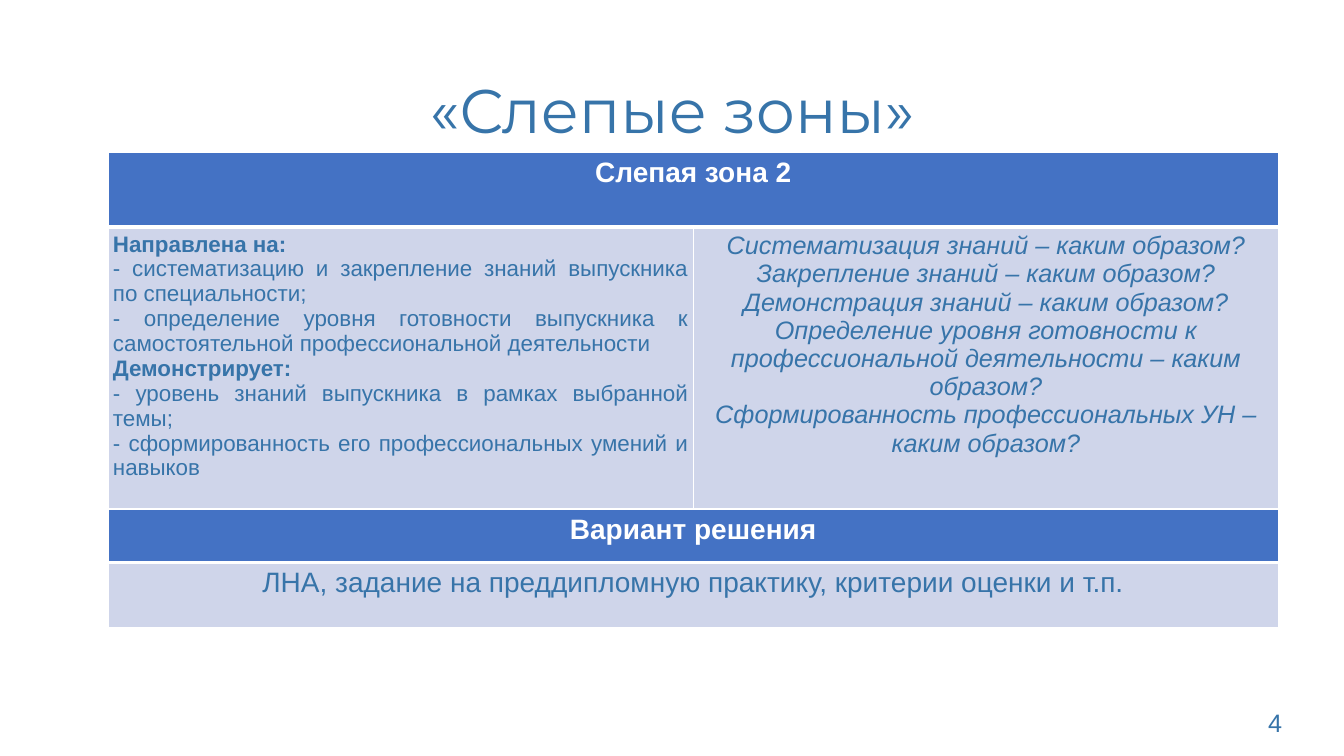
import dataclasses

import lxml.etree
import pptx
import pptx.dml.color
import pptx.enum.text
import pptx.oxml.ns
import pptx.util

ALIGN = pptx.enum.text.PP_ALIGN


@dataclasses.dataclass(frozen=True)
class Theme:
    text: str = "3774A9"
    header: str = "4472C4"
    panel: str = "CFD5EA"
    white: str = "FFFFFF"
    title_font: str = "Montserrat"
    body_font: str = "Arial"
    title_size: int = 44
    heading_size: int = 20
    answer_size: int = 18
    detail_size: int = 16
    thin_line: int = 1
    thick_line: int = 3


@dataclasses.dataclass
class Entry:
    text: str
    size: int
    bold: bool = False
    italic: bool = False
    align: ALIGN = ALIGN.CENTER


class SlideBuilder:
    def __init__(self, deck, theme):
        self.deck = deck
        self.theme = theme
        self.page = deck.slides.add_slide(deck.slide_layouts[5])

    def across(self, percent):
        return round(self.deck.slide_width * percent / 100)

    def down(self, percent):
        return round(self.deck.slide_height * percent / 100)

    def area(self, left, top, width, height):
        return self.across(left), self.down(top), self.across(width), self.down(height)

    def style(self, paragraph, entry, color, font):
        paragraph.text = entry.text
        paragraph.alignment = entry.align
        paragraph.font.name = font
        paragraph.font.size = pptx.util.Pt(entry.size)
        paragraph.font.bold = entry.bold
        paragraph.font.italic = entry.italic
        paragraph.font.color.rgb = pptx.dml.color.RGBColor.from_string(color)

    def title(self, text, area):
        box = self.page.shapes.title
        box.left, box.top, box.width, box.height = self.area(*area)
        box.text_frame.vertical_anchor = pptx.enum.text.MSO_ANCHOR.MIDDLE
        paragraph = box.text_frame.paragraphs[0]
        self.style(paragraph, Entry(text, self.theme.title_size),
                   self.theme.text, self.theme.title_font)
        paragraph.line_spacing = 0.9

    def page_number(self, text, area):
        box = self.page.shapes.add_textbox(*self.area(*area))
        box.text_frame.word_wrap = True
        entry = Entry(text, self.theme.answer_size, align=ALIGN.LEFT)
        self.style(box.text_frame.paragraphs[0], entry,
                   self.theme.text, self.theme.body_font)

    def border(self, cell, side, points):
        properties = cell._tc.get_or_add_tcPr()
        line = lxml.etree.SubElement(properties, pptx.oxml.ns.qn(f"a:ln{side}"),
                                     w=str(pptx.util.Pt(points)))
        fill = lxml.etree.SubElement(line, pptx.oxml.ns.qn("a:solidFill"))
        lxml.etree.SubElement(fill, pptx.oxml.ns.qn("a:srgbClr"), val=self.theme.white)

    def cell(self, cell, entries, is_header, inset):
        theme = self.theme
        seam = "B" if is_header else "T"
        for side in "LRTB":
            self.border(cell, side, theme.thick_line if side == seam else theme.thin_line)
        cell.fill.solid()
        cell.fill.fore_color.rgb = pptx.dml.color.RGBColor.from_string(
            theme.header if is_header else theme.panel)
        cell.margin_left = cell.margin_right = pptx.util.Inches(inset)
        cell.margin_top = cell.margin_bottom = pptx.util.Inches(0.05)
        frame = cell.text_frame
        for index, entry in enumerate(entries):
            paragraph = frame.add_paragraph() if index else frame.paragraphs[0]
            self.style(paragraph, entry, theme.white if is_header else theme.text,
                       theme.body_font)

    def table(self, heading, contents, left, top, width, heights, inset):
        columns = len(contents)
        area = self.area(left, top, width, sum(heights))
        table = self.page.shapes.add_table(2, columns, *area).table
        table.first_row = table.horz_banding = False
        for row, height in zip(table.rows, heights):
            row.height = self.down(height)
        for column in table.columns:
            column.width = self.across(width / columns)
        header = [Entry(heading, self.theme.heading_size, bold=True)]
        for index, entries in enumerate(contents):
            self.cell(table.cell(0, index), [] if index else header, True, inset)
            self.cell(table.cell(1, index), entries, False, inset)
        if columns > 1:
            table.cell(0, 0).merge(table.cell(0, columns - 1))


def main():
    deck = pptx.Presentation()
    deck.slide_width = pptx.util.Inches(13.33)
    deck.slide_height = pptx.util.Inches(7.5)
    theme = Theme()
    builder = SlideBuilder(deck, theme)

    aims = [
        Entry(text, theme.detail_size, bold=text.endswith(":"), align=ALIGN.JUSTIFY)
        for text in (
            "Направлена на:",
            "- систематизацию и закрепление знаний выпускника по специальности;",
            "- определение уровня готовности выпускника к самостоятельной "
            "профессиональной деятельности",
            "Демонстрирует:",
            "- уровень знаний выпускника в рамках выбранной темы;",
            "- сформированность его профессиональных умений и навыков",
        )
    ]
    questions = [
        Entry(f"{topic} – каким образом?", theme.answer_size, italic=True)
        for topic in (
            "Систематизация знаний",
            "Закрепление знаний",
            "Демонстрация знаний",
            "Определение уровня готовности к профессиональной деятельности",
            "Сформированность профессиональных УН",
        )
    ]
    solution = [Entry("ЛНА, задание на преддипломную практику, критерии оценки и т.п.",
                      theme.heading_size)]

    builder.page_number("4", (93.62, 92.93, 5.18, 5.33))
    builder.title("«Слепые зоны»", (6.9, 5.33, 86.27, 19.33))
    builder.table("Слепая зона 2", [aims, questions],
                  left=8.03, top=20.13, width=87.1, heights=(9.87, 51.47), inset=0.05)
    builder.table("Вариант решения", [solution],
                  left=8.03, top=67.33, width=87.1, heights=(7.07, 8.67), inset=0.1)
    deck.save("out.pptx")


if __name__ == "__main__":
    main()
